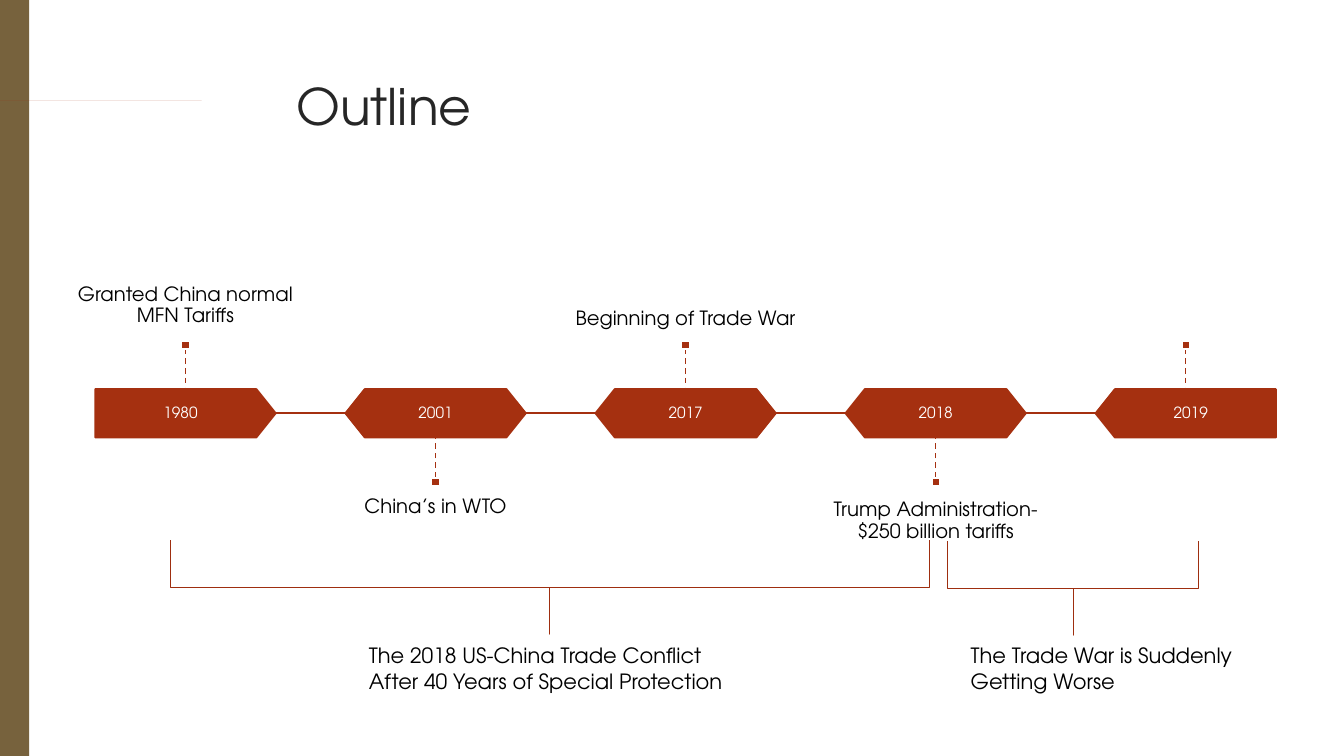
from lxml import etree
from pptx import Presentation, util as u
from pptx.dml.color import RGBColor
from pptx.enum import dml, shapes, text
from pptx.oxml.ns import qn

TITLE = "Outline"
EVENTS = [
    ("1980", "Granted China normal MFN Tariffs"),
    ("2001", "China’s in WTO"),
    ("2017", "Beginning of Trade War"),
    ("2018", "Trump Administration- $250 billion tariffs"),
    ("2019", ""),
]
PERIODS = [
    ("The 2018 US-China Trade Conflict After 40 Years of Special Protection",
     (4.99, 2.06, 0.93, 7.53), (3.56, 6.33, 3.98, 0.93)),
    ("The Trade War is Suddenly Getting Worse",
     (10.18, 4.59, 0.93, 2.49), (9.53, 6.33, 3.47, 0.93)),
]
TAG = [(0, 0.78), (1.46, 0.78), (1.48, 0.79), (1.73, 1.04), (1.74, 1.06),
       (1.73, 1.08), (1.48, 1.33), (1.46, 1.34), (0, 1.33)]
THEME = {
    "font": "TeX Gyre Adventor",
    "accent": "A53010", "brace": "9E2E0F", "side": "77623D",
    "title": "262626", "body": "000000", "light": "FFFFFF",
    "title_size": 36, "period_size": 15, "event_size": 14, "year_size": 11,
}
FIRST_CENTER, PITCH = 1.84, 2.48
AXIS, NODE_WIDTH, NODE_HEIGHT = 4.1, 1.79, 0.48
STEM, DOT = 0.4, 0.08
LABEL_HEIGHT, LABEL_INSET = 1.28, 0.14

deck = Presentation()
deck.slide_width, deck.slide_height = u.Inches(13.33), u.Inches(7.5)
page = deck.slides.add_slide(deck.slide_layouts[6])


def color(name):
    return RGBColor.from_string(THEME[name])


def inches(values):
    return [u.Inches(value) for value in values]


def paint(shape, fill=None, line=None, width=1.25):
    shape.shadow.inherit = False
    if fill:
        shape.fill.solid()
        shape.fill.fore_color.rgb = color(fill)
    else:
        shape.fill.background()
    if line:
        shape.line.color.rgb = color(line)
        shape.line.width = u.Pt(width)
    else:
        shape.line.fill.background()


def add_shape(kind, at, fill=None, line=None, width=1.25):
    shape = page.shapes.add_shape(kind, *inches(at))
    paint(shape, fill, line, width)
    return shape


def add_line(start, end, width, dash=None):
    line = page.shapes.add_connector(shapes.MSO_CONNECTOR.STRAIGHT, *inches(start + end))
    line.line.color.rgb = color("accent")
    line.line.width = u.Pt(width)
    if dash:
        line.line.dash_style = dash
    etree.SubElement(line._element.spPr, qn("a:effectLst"))


def add_text(words, at, size, ink, inset=(0.1, 0.05), anchor=text.MSO_ANCHOR.TOP,
             align=text.PP_ALIGN.LEFT, spacing=1.0):
    frame = page.shapes.add_textbox(*inches(at)).text_frame
    frame.word_wrap = True
    frame.vertical_anchor = anchor
    frame.margin_left = frame.margin_right = u.Inches(inset[0])
    frame.margin_top = frame.margin_bottom = u.Inches(inset[1])
    para = frame.paragraphs[0]
    para.text = words
    para.alignment = align
    para.line_spacing = spacing
    para.font.name = THEME["font"]
    para.font.size = u.Pt(THEME[size])
    para.font.color.rgb = color(ink)


def add_event(index, year, label):
    center = FIRST_CENTER + index * PITCH
    left, top = center - NODE_WIDTH / 2, AXIS - NODE_HEIGHT / 2
    first, last = index == 0, index == len(EVENTS) - 1
    kind = shapes.MSO_SHAPE.PENTAGON if first or last else shapes.MSO_SHAPE.HEXAGON
    node = add_shape(kind, (left, top, NODE_WIDTH, NODE_HEIGHT), "accent", "accent")
    node.adjustments[0] = 0.4
    node.rotation = 180 if last else 0

    shift = -0.05 if first else 0.05 if last else 0
    add_text(year, (left + shift, top, NODE_WIDTH, NODE_HEIGHT), "year_size", "light",
             (0.09, 0.09), text.MSO_ANCHOR.MIDDLE, text.PP_ALIGN.CENTER, 0.9)
    if not last:
        right = left + NODE_WIDTH
        add_line((right, AXIS), (left + PITCH, AXIS), 1.25)

    above = index % 2 == 0
    side = -1 if above else 1
    edge = AXIS + side * NODE_HEIGHT / 2
    tip = edge + side * STEM
    add_line((center, tip), (center, edge), 1, dml.MSO_LINE.DASH)
    dot_top = tip - DOT if above else tip
    add_shape(shapes.MSO_SHAPE.RECTANGLE, (center - DOT / 2, dot_top, DOT, DOT),
              "accent", "light")
    if label:
        label_top = dot_top - LABEL_HEIGHT if above else dot_top + DOT
        anchor = text.MSO_ANCHOR.BOTTOM if above else text.MSO_ANCHOR.TOP
        add_text(label, (center - PITCH / 2, label_top, PITCH, LABEL_HEIGHT),
                 "event_size", "body", (0, LABEL_INSET), anchor,
                 text.PP_ALIGN.CENTER, 0.9)


add_shape(shapes.MSO_SHAPE.RECTANGLE, (-0.01, 0, 0.3, 7.5), "side")
outline = page.shapes.build_freeform(*TAG[0], scale=u.Inches(1))
outline.add_line_segments(TAG[1:], close=True)
paint(outline.convert_to_shape(), "accent")
add_text(TITLE, (2.84, 0.7, 9.75, 1.4), "title_size", "title")

for index, (year, label) in enumerate(EVENTS):
    add_event(index, year, label)

for words, brace_at, words_at in PERIODS:
    brace = add_shape(shapes.MSO_SHAPE.LEFT_BRACE, brace_at, line="brace", width=0.75)
    brace.adjustments[0] = 0
    brace.rotation = 270
    add_text(words, words_at, "period_size", "body")

deck.save("out.pptx")
